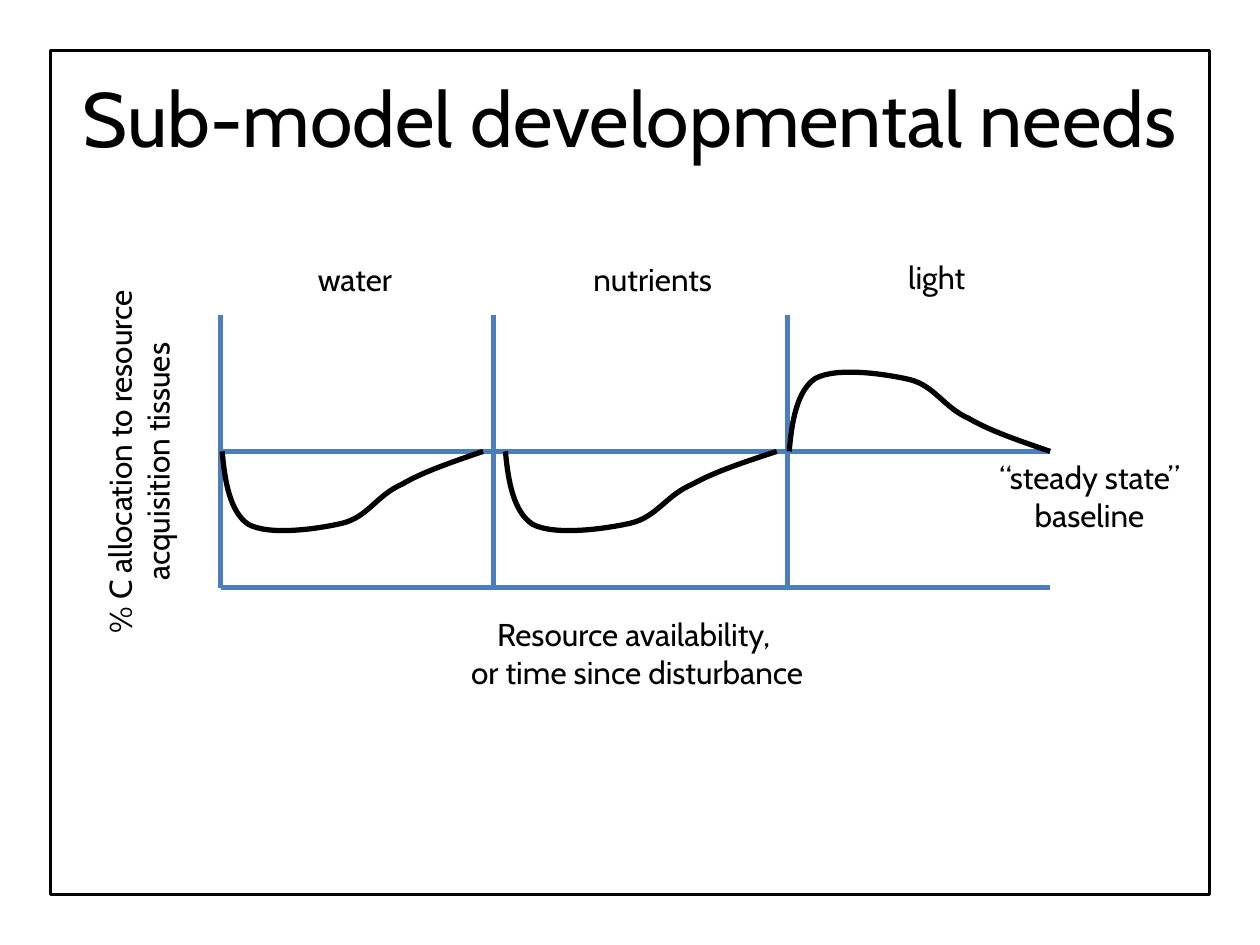
from lxml.etree import SubElement
from pptx import Presentation
from pptx.dml.color import RGBColor
from pptx.enum.shapes import MSO_CONNECTOR as Connector, MSO_SHAPE as Preset
from pptx.enum.text import MSO_ANCHOR as Anchor, MSO_AUTO_SIZE as AutoSize, PP_ALIGN as Align
from pptx.oxml.ns import qn
from pptx.util import Cm, Pt

COLOURS = {"ink": "000000", "axis": "4B7EBC", "paper": "FFFFFF"}
TITLE_ONLY = 5

# Axis positions, in cm
AXIS_LEFT, AXIS_RIGHT = 4.45, 21.16
AXIS_TOP, BASELINE, AXIS_BOTTOM = 6.35, 9.1, 11.85
DIVIDERS = [9.95, 15.88]

# Bezier control points: fraction of the curve width, distance from baseline in cm
RESPONSE = [
    (0, 0), (0.01, 0.61), (0.03, 1.22), (0.1, 1.47),
    (0.18, 1.7), (0.36, 1.57), (0.46, 1.45),
    (0.56, 1.32), (0.59, 0.89), (0.69, 0.66),
    (0.77, 0.41), (0.89, 0.2), (1, 0),
]
# left, width, direction (1 is below the baseline, -1 above)
CURVES = [(4.48, 5.26, 1), (10.19, 5.47, 1), (15.91, 5.26, -1)]

# text, left, top, width, height, rotation
LABELS = [
    ("Resource availability, \vor time since disturbance", 7.7, 12.27, 10.29, 1.8, 0),
    ("% C allocation to resource acquisition tissues", -1.01, 8.41, 7.62, 1.8, 270),
    ("water", 5.72, 5.11, 2.87, 1.02, 0),
    ("nutrients", 11.51, 5.11, 3.3, 1.02, 0),
    ("light", 17.45, 5.07, 2.87, 1.02, 0),
    ("“steady state” baseline", 19.26, 9.11, 5.41, 1.8, 0),
]


class SlideBuilder:
    font_name = "Cabin"

    def __init__(self, slide):
        self.slide = slide

    def colour(self, name):
        return RGBColor.from_string(COLOURS[name])

    def style_line(self, line, name, width):
        line.color.rgb = self.colour(name)
        line.width = Pt(width)

    def style_text(self, frame, size):
        frame.word_wrap = True
        for paragraph in frame.paragraphs:
            paragraph.alignment = Align.CENTER
            paragraph.font.name = self.font_name
            paragraph.font.size = Pt(size)
            paragraph.font.color.rgb = self.colour("ink")

    def title(self, text, *box):
        shape = self.slide.shapes.title
        shape.left, shape.top, shape.width, shape.height = map(Cm, box)
        frame = shape.text_frame
        frame.text = text
        frame.auto_size = AutoSize.NONE
        frame.vertical_anchor = Anchor.MIDDLE
        self.style_text(frame, 44)

    def frame(self, *box):
        """Add a translucent bordered rectangle behind everything else."""
        shape = self.slide.shapes.add_shape(Preset.RECTANGLE, *map(Cm, box))
        shape.shadow.inherit = False
        shape.fill.solid()
        shape.fill.fore_color.rgb = self.colour("paper")
        fill_colour = shape._element.spPr.find(qn("a:solidFill"))[0]
        SubElement(fill_colour, qn("a:alpha"), val="85000")
        self.style_line(shape.line, "ink", 2)
        self.slide.shapes._spTree.insert(2, shape._element)

    def axis(self, *ends):
        connector = self.slide.shapes.add_connector(Connector.STRAIGHT, *map(Cm, ends))
        self.style_line(connector.line, "axis", 3)
        SubElement(connector._element.spPr, qn("a:effectLst"))

    def label(self, text, left, top, width, height, rotation):
        shape = self.slide.shapes.add_textbox(*map(Cm, (left, top, width, height)))
        shape.rotation = rotation
        shape.text_frame.text = text
        shape.text_frame.auto_size = AutoSize.SHAPE_TO_FIT_TEXT
        self.style_text(shape.text_frame, 18)

    def curve(self, left, width, direction):
        """Add a response curve, turning each three line segments into one Bezier."""
        points = [(Cm(left + x * width), Cm(BASELINE + direction * y)) for x, y in RESPONSE]
        builder = self.slide.shapes.build_freeform(*points[0])
        builder.add_line_segments(points[1:], close=False)
        shape = builder.convert_to_shape()
        outline = next(shape._element.iter(qn("a:path")))
        segments = outline.findall(qn("a:lnTo"))
        for start in range(0, len(segments), 3):
            bezier = SubElement(outline, qn("a:cubicBezTo"))
            for segment in segments[start:start + 3]:
                bezier.append(segment[0])
                outline.remove(segment)
        shape.shadow.inherit = False
        shape.fill.background()
        self.style_line(shape.line, "ink", 3)


def main():
    presentation = Presentation()
    presentation.slide_width, presentation.slide_height = Cm(25.4), Cm(19.05)
    layout = presentation.slide_layouts[TITLE_ONLY]
    builder = SlideBuilder(presentation.slides.add_slide(layout))

    builder.frame(1.02, 1.02, 23.36, 17.01)
    builder.title("Sub-model developmental needs", 1.27, 0.76, 22.86, 3.18)
    builder.axis(AXIS_LEFT, AXIS_TOP, AXIS_LEFT, AXIS_BOTTOM)
    builder.axis(AXIS_RIGHT, AXIS_BOTTOM, AXIS_LEFT, AXIS_BOTTOM)
    for x in DIVIDERS:
        builder.axis(x, AXIS_TOP, x, AXIS_BOTTOM)
    builder.axis(AXIS_RIGHT, BASELINE, AXIS_LEFT, BASELINE)
    for label in LABELS:
        builder.label(*label)
    for curve in CURVES:
        builder.curve(*curve)

    presentation.save("out.pptx")


if __name__ == "__main__":
    main()
